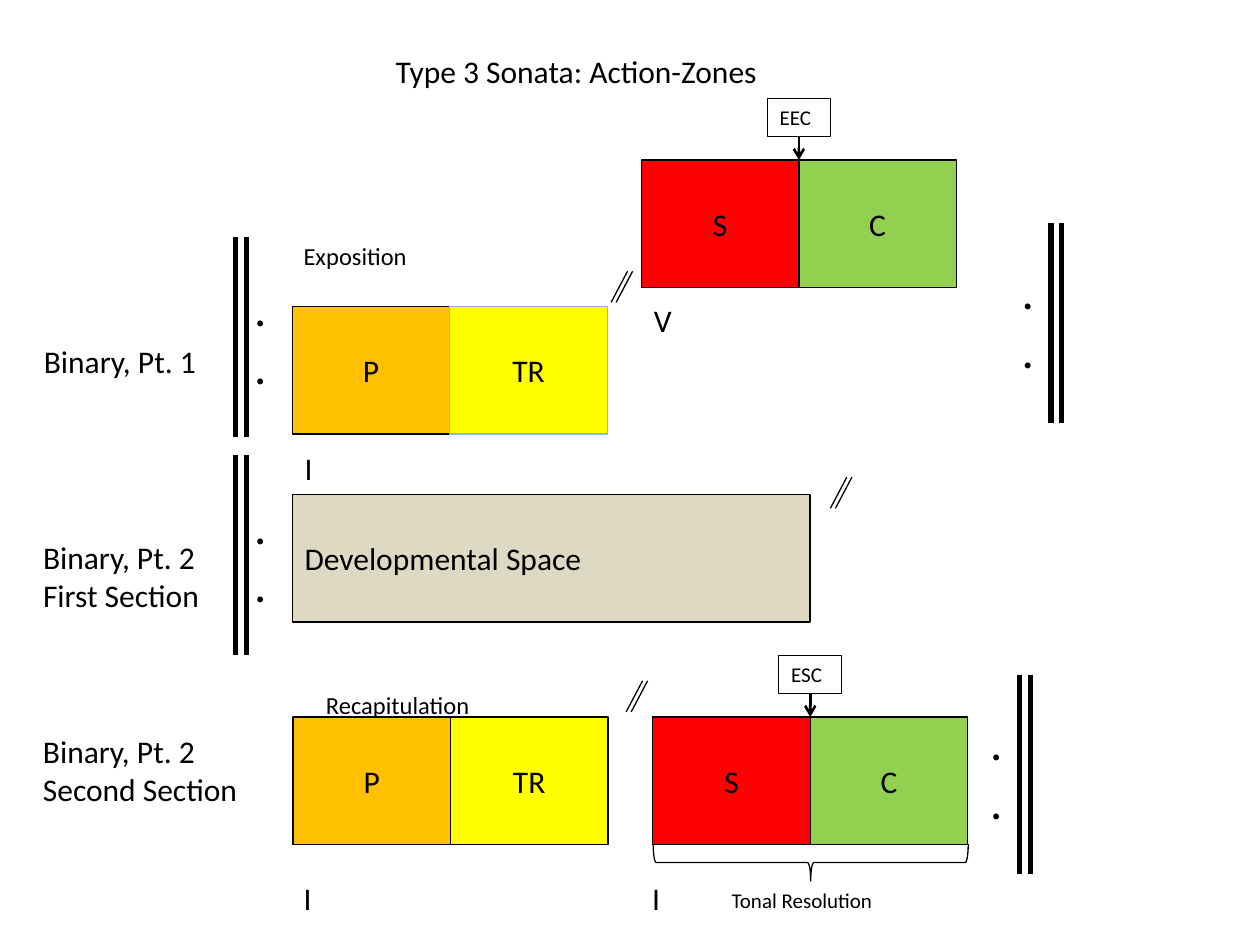
from lxml.etree import SubElement
from pptx import Presentation
from pptx.dml.color import RGBColor
from pptx.enum.shapes import MSO_CONNECTOR as Conn, MSO_SHAPE as Kind
from pptx.enum.text import MSO_ANCHOR as Anchor, PP_ALIGN as Align
from pptx.oxml.ns import qn
from pptx.util import Pt


def color(code):
    return RGBColor.from_string(code)


class Chart:
    """Draws the parts of a sonata form diagram on one slide, in points."""

    font = "Calibri"
    ink = "000000"
    wide, high = 90, 73

    def __init__(self, slide):
        self.shapes = slide.shapes

    def letter(self, shape, text, size, align=Align.LEFT, anchor=Anchor.TOP):
        frame = shape.text_frame
        frame.word_wrap = True
        frame.vertical_anchor = anchor
        frame.text = text
        for para in frame.paragraphs:
            para.alignment = align
            for run in para.runs:
                run.font.size = Pt(size)
                run.font.name = self.font
                run.font.color.rgb = color(self.ink)

    def shape(self, kind, x, y, w, h, fill=None, edge=ink):
        item = self.shapes.add_shape(kind, Pt(x), Pt(y), Pt(w), Pt(h))
        item.shadow.inherit = False
        if fill:
            item.fill.solid()
            item.fill.fore_color.rgb = color(fill)
        else:
            item.fill.background()
        item.line.color.rgb = color(edge)
        item.line.width = Pt(0.75)
        return item

    def zone(self, text, x, y, fill, w=wide, edge=ink, align=Align.CENTER):
        item = self.shape(Kind.RECTANGLE, x, y, w, self.high, fill, edge)
        self.letter(item, text, 18, align, Anchor.MIDDLE)

    def label(self, text, x, y, w, h=29, size=18):
        item = self.shapes.add_textbox(Pt(x), Pt(y), Pt(w), Pt(h))
        self.letter(item, text, size)

    def line(self, x1, y1, x2, y2, width=0.75):
        item = self.shapes.add_connector(Conn.STRAIGHT, Pt(x1), Pt(y1), Pt(x2), Pt(y2))
        item.line.color.rgb = color(self.ink)
        item.line.width = Pt(width)
        SubElement(item._element.spPr, qn("a:effectLst"))
        return item

    def goal(self, text, x, y):
        box = self.shape(Kind.RECTANGLE, x - 18, y - 35.2, 36, 21.8)
        self.letter(box, text, 12)
        arrow = self.line(x, y - 13.4, x, y, 1.5)
        arrow.begin_connect(box, 2)
        SubElement(arrow._element.spPr.find(qn("a:ln")), qn("a:tailEnd"), type="arrow")

    def slash(self, x, y):
        for left in (x, x + 2.9):
            self.line(left + 9.4, y, left, y + 17.8)

    def repeat(self, x, y, shift, drop):
        for left in (x, x + 6.1):
            self.line(left, y, left, y + 114.2, 3)
        self.label(".\n.", x + shift, y + drop, 30, 75, 28)

    def brace(self, x, y, w, h):
        item = self.shape(Kind.LEFT_BRACE, x + (w - h) / 2, y + (h - w) / 2, h, w)
        item.rotation = 270


def main():
    deck = Presentation()
    deck.slide_width, deck.slide_height = Pt(720), Pt(540)
    chart = Chart(deck.slides.add_slide(deck.slide_layouts[6]))

    left, top, mid, low = 167, 91.4, 175, 409.7
    wide = chart.wide
    gold, yellow, red, green = "FFC000", "FFFF00", "FF0000", "92D050"

    for x, y, edge in ((left, mid, "8EB4E3"), (left + 0.4, low, "000000")):
        chart.zone("P", x, y, gold)
        chart.zone("TR", x + wide, y, yellow, edge=edge)
    for x, y, text in ((366.5, top, "EEC"), (373, low, "ESC")):
        chart.zone("S", x, y, red)
        chart.zone("C", x + wide, y, green)
        chart.goal(text, x + wide, y)
    chart.zone("Developmental Space", left, 282.4, "DDD9C3", 296, align=Align.LEFT)

    chart.label("Type 3 Sonata: Action-Zones", 219, 26.2, 238)
    chart.label("Exposition", 166.4, 134, 77, 24, 14)
    chart.label("Recapitulation", 179.2, 390.5, 100, 24, 14)
    chart.label("Tonal Resolution", 411, 503.5, 100, 22, 12)
    chart.label("Binary, Pt. 1", 18, 191.7, 105)
    chart.label("Binary, Pt. 2\nFirst Section", 17.5, 304, 112, 51)
    chart.label("Binary, Pt. 2\nSecond Section", 17.5, 415, 136, 51)
    for text, x, y in (("I", left, 253), ("V", 366.5, 168.7),
                       ("I", 166.4, 498.5), ("I", 365.5, 498.5)):
        chart.label(text, x, y, 27)

    for x, y in ((349.2, 155), (357.8, 389), (474.5, 272.7)):
        chart.slash(x, y)
    for y in (135.4, 260):
        chart.repeat(134.6, y, 3.6, 19.4)
    for x, y in ((600.6, 127.7), (582.7, 385.5)):
        chart.repeat(x, y, -23.9, 17.7)
    chart.brace(373.3, 482.4, 180, 21)

    deck.save("out.pptx")


if __name__ == "__main__":
    main()
